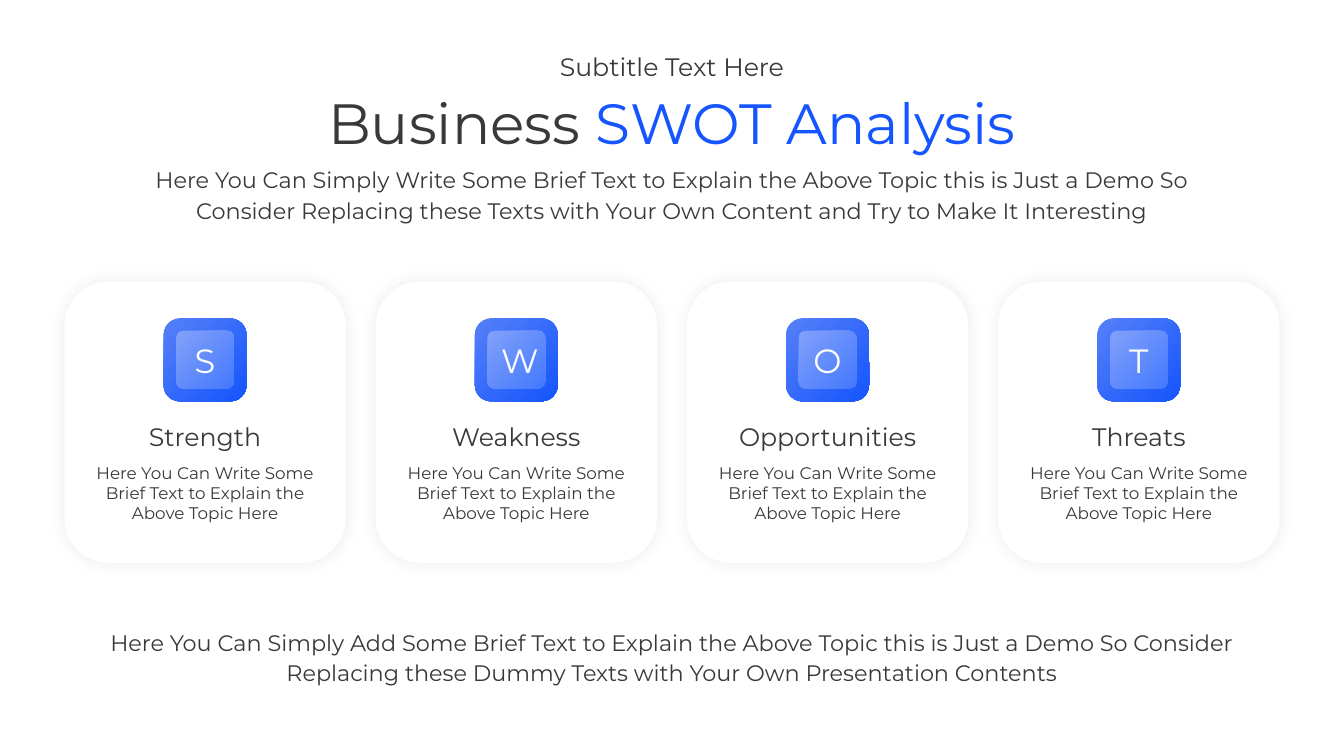
"""Build a SWOT analysis slide with four cards."""
from lxml import etree
from pptx import Presentation
from pptx.dml.color import RGBColor
from pptx.enum.shapes import MSO_SHAPE
from pptx.enum.text import MSO_AUTO_SIZE, PP_ALIGN
from pptx.oxml import parse_xml
from pptx.util import Pt

ROUNDED = MSO_SHAPE.ROUNDED_RECTANGLE
CENTER = PP_ALIGN.CENTER
GROW = MSO_AUTO_SIZE.SHAPE_TO_FIT_TEXT
color = RGBColor.from_string
DRAWING = 'xmlns:a="http://schemas.openxmlformats.org/drawingml/2006/main"'
FONT = "Montserrat"
DARK, WHITE, BLUE, LIGHT_BLUE = "3B3838", "FFFFFF", "1555FD", "5680F8"

SLIDE_WIDTH = 960
CARD_LEFT, CARD_TOP, CARD_SIZE = 46, 201, 201
CARD_PITCH = (SLIDE_WIDTH - 2 * CARD_LEFT - CARD_SIZE) / 3
BODY = "Here You Can Write Some\nBrief Text to Explain the\nAbove Topic Here"
CARDS = ["Strength", "Weakness", "Opportunities", "Threats"]
TILES = [
    (227.5, 59.2, 0.196, BLUE, LIGHT_BLUE),
    (236.3, 41.2, 0.121, "4479FE", "82A1FA"),
]


def set_gradient(fill, start, end):
    """Give a fill a two-stop gradient."""
    fill.gradient()
    for stop, value in zip(fill.gradient_stops, (start, end)):
        stop.color.rgb = color(value)


def add_text(shapes, text, center, top, width, height, size, fill=DARK, spacing=None):
    """Add centred text around a horizontal centre and return its frame."""
    box = shapes.add_textbox(Pt(center - width / 2), Pt(top), Pt(width), Pt(height))
    frame = box.text_frame
    frame.word_wrap = False
    frame.auto_size = GROW
    frame.text = text
    for paragraph in frame.paragraphs:
        paragraph.alignment = CENTER
        if spacing:
            paragraph.line_spacing = Pt(spacing)
        for run in paragraph.runs:
            run.font.name = FONT
            run.font.size = Pt(size)
            run.font.color.rgb = color(fill)
    return frame


presentation = Presentation()
presentation.slide_width = Pt(SLIDE_WIDTH)
presentation.slide_height = Pt(540)
slide = presentation.slides.add_slide(presentation.slide_layouts[6])
slide.background.fill.solid()
slide.background.fill.fore_color.rgb = color(WHITE)
middle = SLIDE_WIDTH / 2

title = add_text(slide.shapes, "Business ", middle, 59, 550, 56, 40.5)
accent = title.paragraphs[0].add_run()
accent.text = "SWOT Analysis"
accent.font.name = FONT
accent.font.size = Pt(40.5)
set_gradient(accent.font.fill, BLUE, LIGHT_BLUE)
accent.font.fill.gradient_angle = 180
add_text(slide.shapes, "Subtitle Text Here", middle, 33.2, 180, 29, 18)

for index, name in enumerate(CARDS):
    left = CARD_LEFT + index * CARD_PITCH
    center = left + CARD_SIZE / 2
    shapes = slide.shapes.add_group_shape().shapes

    card = shapes.add_shape(ROUNDED, Pt(left), Pt(CARD_TOP), Pt(CARD_SIZE), Pt(CARD_SIZE))
    card.adjustments[0] = 0.157
    card.fill.solid()
    card.fill.fore_color.rgb = color(WHITE)
    card.line.fill.background()
    card.shadow.inherit = False
    effects = card._element.spPr.find("{*}effectLst")
    effects.append(parse_xml(
        f'<a:outerShdw {DRAWING} blurRad="{Pt(12)}" dist="0" algn="ctr" rotWithShape="0">'
        '<a:srgbClr val="000000"><a:alpha val="8000"/></a:srgbClr></a:outerShdw>'))

    for top, size, rounding, start, end in TILES:
        tile = shapes.add_shape(ROUNDED, Pt(center - size / 2), Pt(top), Pt(size), Pt(size))
        tile.adjustments[0] = rounding
        tile.shadow.inherit = False
        tile.line.fill.background()
        set_gradient(tile.fill, start, end)
        gradient = tile._element.spPr.find("{*}gradFill")
        gradient.replace(gradient.find("{*}lin"), etree.fromstring(
            f'<a:path {DRAWING} path="circle"><a:fillToRect l="100000" t="100000"/></a:path>'))

    add_text(shapes, name[0], center, 239, 36, 36, 24, fill=WHITE)
    add_text(shapes, name, center, 297.4, 150, 29, 18)
    add_text(shapes, BODY, center, 326.9, 173, 51, 12)

add_text(
    slide.shapes,
    "Here You Can Simply Add Some Brief Text to Explain the Above Topic this is Just a Demo So Consider\n"
    "Replacing these Dummy Texts with Your Own Presentation Contents",
    middle, 442.8, 841, 50.4, 16, spacing=22)
add_text(
    slide.shapes,
    "Here You Can Simply Write Some Brief Text to Explain the Above Topic this is Just a Demo So\v"
    "Consider Replacing these Texts with Your Own Content and Try to Make It Interesting",
    middle, 112.3, 783, 50.4, 16, spacing=22)

presentation.save("out.pptx")
